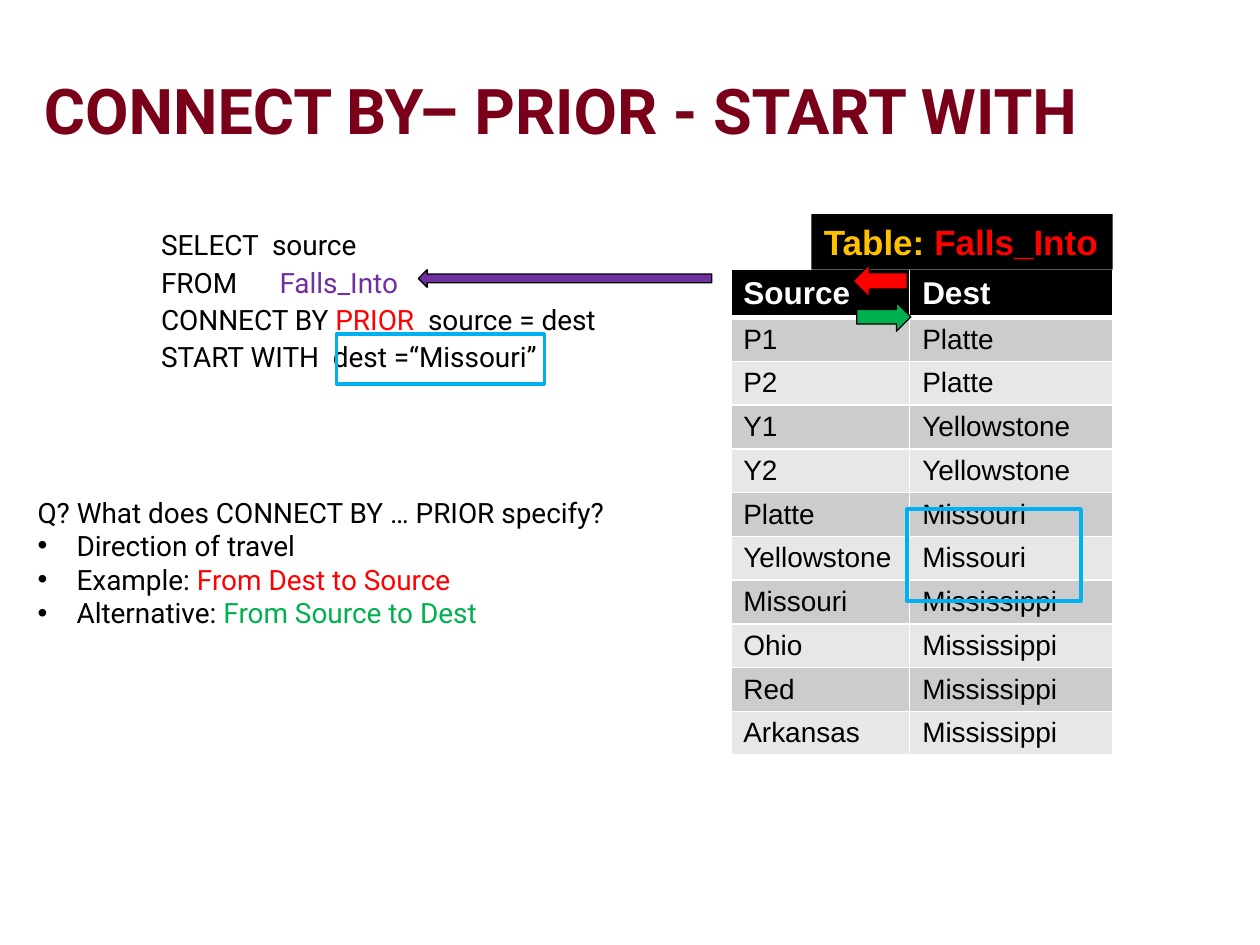
from lxml import etree
from pptx import Presentation
from pptx.dml.color import RGBColor
from pptx.enum.shapes import MSO_SHAPE
from pptx.enum.text import MSO_ANCHOR
from pptx.oxml.ns import qn
from pptx.util import Inches, Pt

RECTANGLE = MSO_SHAPE.RECTANGLE
LEFT_ARROW = MSO_SHAPE.LEFT_ARROW
RIGHT_ARROW = MSO_SHAPE.RIGHT_ARROW
TOP, MIDDLE = MSO_ANCHOR.TOP, MSO_ANCHOR.MIDDLE
GRID = 0.25
BLACK, WHITE, RED, GREEN = "000000", "FFFFFF", "FF0000", "00B050"
PURPLE, SKY, GOLD, MAROON = "7030A0", "00B0F0", "FFC000", "7A0019"
BANDS = ("CCCCCC", "E7E7E7")


def color(value):
    return RGBColor.from_string(value)


def grid(*lengths):
    return [Inches(length * GRID) for length in lengths]


def write(frame, paragraphs, font="Roboto", size=16, bold=False, ink=BLACK,
          line_spacing=None, gap=0, indent=0, bullet_from=None, tab=None):
    for index, spans in enumerate(paragraphs):
        para = frame.paragraphs[0] if index == 0 else frame.add_paragraph()
        properties = para._p.get_or_add_pPr()
        if bullet_from is not None and index >= bullet_from:
            properties.set("marL", str(Inches(indent)))
            properties.set("indent", str(-Inches(indent)))
            etree.SubElement(properties, qn("a:buFont"), typeface="Arial")
            etree.SubElement(properties, qn("a:buChar"), char="•")
        if tab:
            tabs = etree.SubElement(properties, qn("a:tabLst"))
            etree.SubElement(tabs, qn("a:tab"), pos=str(Inches(tab)), algn="l")
        if line_spacing:
            para.line_spacing = line_spacing
        if index and gap:
            para.space_before = Pt(gap)
        for text, span_ink in spans:
            span = para.add_run()
            span.text = text
            span.font.name = font
            span.font.size = Pt(size)
            span.font.bold = bold
            span.font.color.rgb = color(span_ink or ink)


class SlideBuilder:
    def __init__(self, deck):
        self.page = deck.slides.add_slide(deck.slide_layouts[6])

    def text(self, place, paragraphs, anchor=TOP, **style):
        box = self.page.shapes.add_textbox(*grid(*place))
        box.text_frame.word_wrap = True
        box.text_frame.vertical_anchor = anchor
        write(box.text_frame, paragraphs, **style)

    def shape(self, kind, place, fill=None, line=None, width=0.75):
        shape = self.page.shapes.add_shape(kind, *grid(*place))
        shape.shadow.inherit = False
        if fill:
            shape.fill.solid()
            shape.fill.fore_color.rgb = color(fill)
        else:
            shape.fill.background()
        if line:
            shape.line.color.rgb = color(line)
            shape.line.width = Pt(width)
        else:
            shape.line.fill.background()
        return shape

    def label(self, place, fill, spans, **style):
        frame = self.shape(RECTANGLE, place, fill).text_frame
        frame.word_wrap = False
        frame.vertical_anchor = TOP
        write(frame, [spans], **style)
        frame.paragraphs[0].alignment = 1

    def borders(self, cell, widths):
        properties = cell._tc.get_or_add_tcPr()
        for side, width in zip("LRTB", widths):
            edge = etree.SubElement(properties, qn(f"a:ln{side}"), w=str(Pt(width)))
            fill = etree.SubElement(edge, qn("a:solidFill"))
            etree.SubElement(fill, qn("a:srgbClr"), val=WHITE)

    def table(self, corner, columns, header_height, row_height, rows):
        heights = [header_height] + [row_height] * (len(rows) - 1)
        place = grid(*corner, sum(columns), sum(heights))
        table = self.page.shapes.add_table(len(rows), len(columns), *place).table
        table.first_row = table.horz_banding = False
        for column, width in zip(table.columns, grid(*columns)):
            column.width = width
        for index, (row, height) in enumerate(zip(table.rows, grid(*heights))):
            row.height = height
            header = index == 0
            for cell, text in zip(row.cells, rows[index]):
                self.borders(cell, (1, 1, 3 if index == 1 else 1, 3 if header else 1))
                cell.fill.solid()
                cell.fill.fore_color.rgb = color(BLACK if header else BANDS[(index - 1) % 2])
                write(cell.text_frame, [[(text, None)]], font="Arial",
                      size=18 if header else 16, bold=header,
                      ink=WHITE if header else BLACK)


def main():
    deck = Presentation()
    deck.slide_width, deck.slide_height = grid(40, 30)
    slide = SlideBuilder(deck)

    rivers = [
        ("Source", "Dest"),
        ("P1", "Platte"), ("P2", "Platte"),
        ("Y1", "Yellowstone"), ("Y2", "Yellowstone"),
        ("Platte", "Missouri"), ("Yellowstone", "Missouri"),
        ("Missouri", "Mississippi"), ("Ohio", "Mississippi"),
        ("Red", "Mississippi"), ("Arkansas", "Mississippi"),
    ]
    slide.table((23.2, 8.56), (5.68, 6.44), 1.52, 1.39, rivers)
    slide.label((25.76, 6.8, 9.56, 1.76), BLACK,
                [("Table: ", GOLD), ("Falls_Into", RED)],
                font="Arial", size=20, bold=True)

    slide.text((1, 1.32, 37.68, 4.32), [[("CONNECT BY– PRIOR - START WITH", None)]],
               anchor=MIDDLE, size=36, bold=True, ink=MAROON)
    query = [
        [("SELECT  source", None)],
        [("FROM\t", None), ("Falls_Into", PURPLE)],
        [("CONNECT BY ", None), ("PRIOR ", RED), (" source = dest", None)],
        [("START WITH  dest =“Missouri”", None)],
    ]
    slide.text((4.72, 7.24, 17.12, 4.88), query, line_spacing=0.8, gap=6, tab=0.94)
    answers = [
        [("Q? What does CONNECT BY … PRIOR specify?", None)],
        [("Direction of travel", None)],
        [("Example: ", None), ("From Dest to Source", RED)],
        [("Alternative: ", None), ("From Source to Dest", GREEN)],
    ]
    slide.text((0.8, 15.52, 23.08, 4.84), answers, indent=0.31, bullet_from=1)

    for highlight in ((10.68, 10.6, 6.6, 1.6), (28.8, 16.16, 5.52, 2.92)):
        slide.shape(RECTANGLE, highlight, line=SKY, width=2)
    arrows = [
        (LEFT_ARROW, (13.28, 8.56, 9.32, 0.56), PURPLE),
        (LEFT_ARROW, (27.08, 8.4, 1.72, 1.04), RED),
        (RIGHT_ARROW, (27.2, 9.6, 1.72, 0.92), GREEN),
    ]
    for kind, place, fill in arrows:
        slide.shape(kind, place, fill, BLACK)

    deck.save("out.pptx")


if __name__ == "__main__":
    main()
